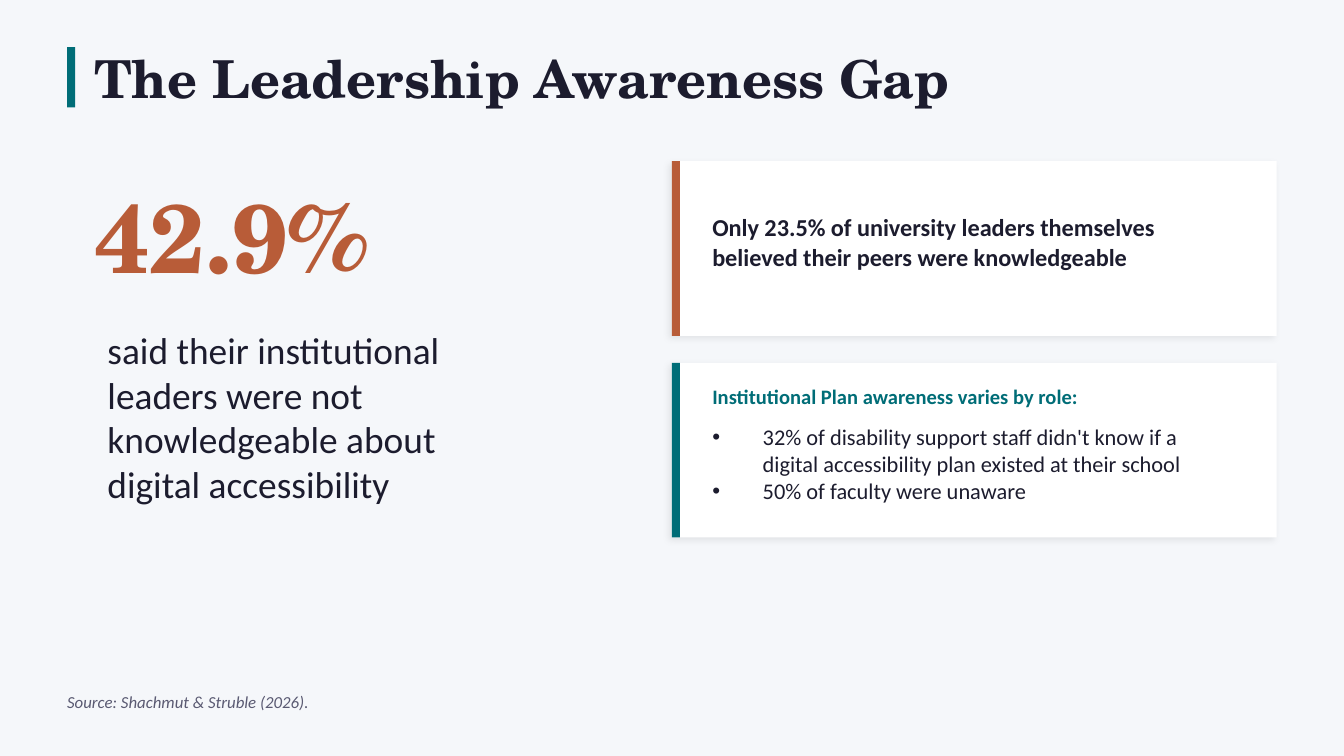
from lxml import etree
from pptx import Presentation, util as u
from pptx.dml.color import RGBColor
from pptx.enum import shapes, text
from pptx.oxml import parse_xml
from pptx.oxml.ns import nsdecls, qn

PX = 4572  # EMU per px, 200 px to the inch
THEME = {
    "page": RGBColor.from_string("F5F7FA"),
    "card": RGBColor.from_string("FFFFFF"),
    "ink": RGBColor.from_string("1C1C2E"),
    "muted": RGBColor.from_string("5A5A72"),
    "teal": RGBColor.from_string("006D77"),
    "rust": RGBColor.from_string("B85C38"),
    "heading": "TeX Gyre Schola",
    "body": "Calibri",
    "sizes": {"title": 28, "figure": 52, "claim": 20, "finding": 13,
              "label": 11, "list": 12, "source": 9},
}

deck = Presentation()
deck.slide_width, deck.slide_height = 2000 * PX, 1125 * PX
slide = deck.slides.add_slide(deck.slide_layouts[1])
slide.background.fill.solid()
slide.background.fill.fore_color.rgb = THEME["page"]


def add_block(box, color):
    block = slide.shapes.add_shape(shapes.MSO_SHAPE.RECTANGLE, *(n * PX for n in box))
    block.shadow.inherit = False
    block.fill.solid()
    block.fill.fore_color.rgb = THEME[color]
    block.line.fill.background()
    return block


def write(holder, box, lines, role, font="body", color="ink", **style):
    for side, length in zip(("left", "top", "width", "height"), box):
        setattr(holder, side, length * PX)
    frame = holder.text_frame
    frame.text = "\n".join(lines)
    layout = {"word_wrap": True, "auto_size": text.MSO_AUTO_SIZE.NONE,
              "vertical_anchor": text.MSO_ANCHOR.MIDDLE,
              "margin_left": 0, "margin_top": 0, "margin_right": 0, "margin_bottom": 0}
    for name, value in layout.items():
        setattr(frame, name, value)
    letters = {"name": THEME[font], "size": u.Pt(THEME["sizes"][role]), **style}
    for paragraph in frame.paragraphs:
        paragraph.alignment = text.PP_ALIGN.LEFT
        paragraph.space_before = u.Pt(0)
        for run in paragraph.runs:
            for name, value in letters.items():
                setattr(run.font, name, value)
            run.font.color.rgb = THEME[color]
    return frame


# Title with accent bar
add_block((100, 70, 12, 90), "teal")
write(slide.shapes.title, (140, 60, 1700, 110), ["The Leadership Awareness Gap"],
      "title", "heading", bold=True)

# Cards with coloured edges
for card_top, edge_color in ((240, "rust"), (540, "teal")):
    card = add_block((1000, card_top, 900, 260), "card")
    card_effects = card._element.spPr.find(qn("a:effectLst"))
    card_effects.append(parse_xml(
        f'<a:outerShdw {nsdecls("a")} blurRad="{u.Pt(4)}" dist="{u.Pt(2)}" '
        f'dir="{135 * 60000}" algn="bl" rotWithShape="0">'
        '<a:srgbClr val="000000"><a:alpha val="8000"/></a:srgbClr></a:outerShdw>'))
    add_block((1000, card_top, 12, 260), edge_color)

# Key figure, claim, card texts and source
passages = [
    ((140, 260, 800, 180), "42.9%", "figure",
     {"font": "heading", "color": "rust", "bold": True}),
    ((160, 470, 568, 300), "said their institutional leaders were not knowledgeable "
     "about digital accessibility", "claim", {}),
    ((1060, 270, 780, 180), "Only 23.5% of university leaders themselves believed "
     "their peers were knowledgeable", "finding", {"bold": True}),
    ((1060, 560, 780, 60), "Institutional Plan awareness varies by role:", "label",
     {"color": "teal", "bold": True}),
    ((100, 1010, 1800, 70), "Source: Shachmut & Struble (2026).", "source",
     {"color": "muted", "italic": True}),
]
for box, words, role, style in passages:
    write(slide.shapes.add_textbox(0, 0, 0, 0), box, [words], role, **style)

# Awareness by role, in front of its card
roles = slide.placeholders[1]
slide.shapes._spTree.append(roles._element)
role_frame = write(roles, (1060, 620, 780, 140), [
    "32% of disability support staff didn't know if a digital accessibility plan "
    "existed at their school",
    "50% of faculty were unaware",
], "list")
for paragraph in role_frame.paragraphs:
    properties = paragraph._p.get_or_add_pPr()
    properties.set("marL", str(75 * PX))
    properties.set("indent", str(-75 * PX))
    etree.SubElement(properties, qn("a:buChar"), char="•")

deck.save("out.pptx")
